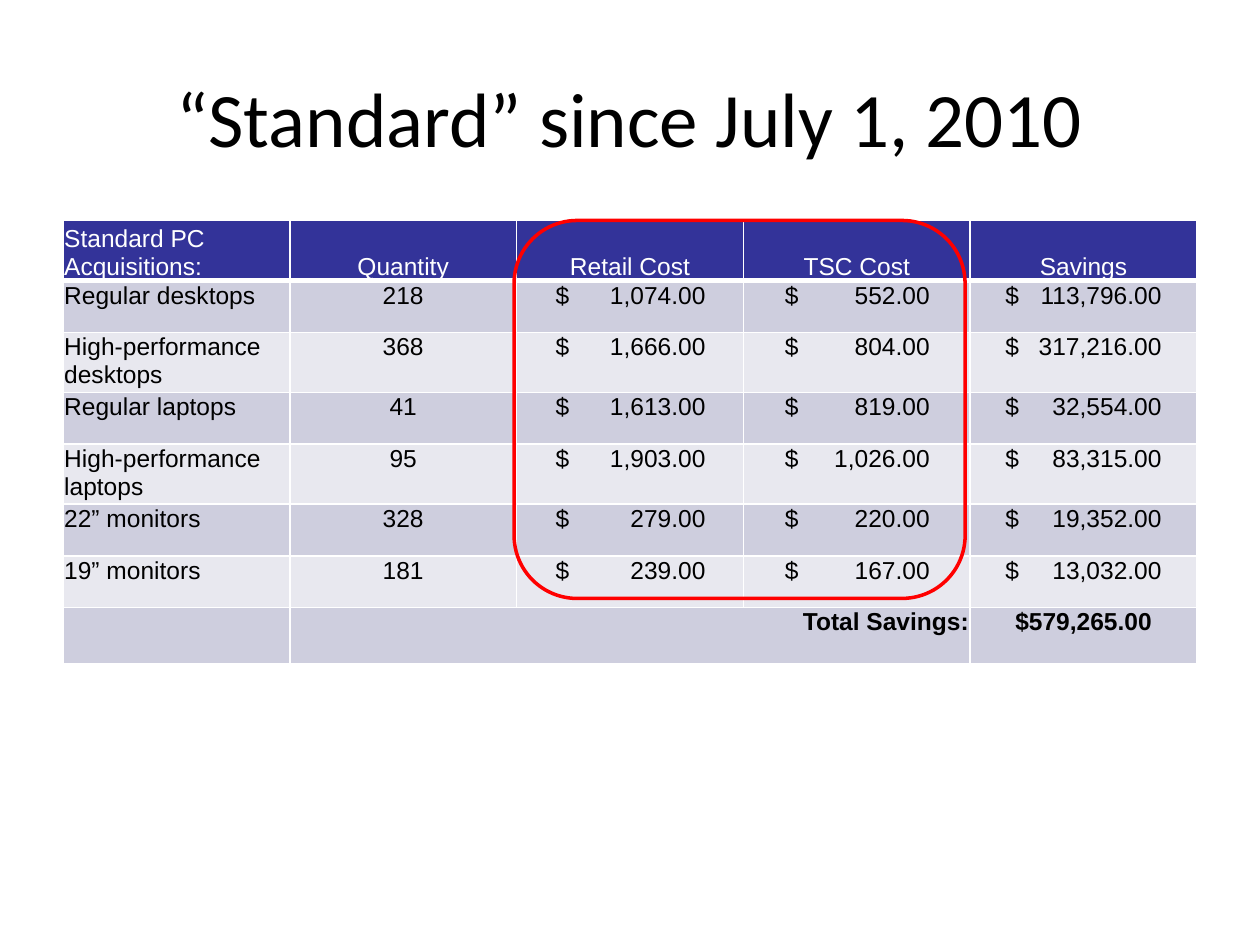
from dataclasses import dataclass

from lxml.etree import SubElement
from pptx import Presentation
from pptx.dml.color import RGBColor
from pptx.enum.shapes import MSO_SHAPE
from pptx.enum.text import MSO_ANCHOR, PP_ALIGN
from pptx.oxml import parse_xml
from pptx.oxml.ns import nsdecls, qn
from pptx.util import Inches, Pt


@dataclass(frozen=True)
class Theme:
    title_font: str = "Calibri"
    body_font: str = "Arial"
    title_size: int = 44
    body_size: int = 14
    ink: str = "000000"
    white: str = "FFFFFF"
    header: str = "333399"
    bands: tuple = ("CECEDE", "E8E8EF")
    highlight: str = "FF0000"


def write(tf, text, font, size, color, align=PP_ALIGN.LEFT, bold=False, tabs=()):
    p = tf.paragraphs[0]
    p.alignment = align
    if tabs:
        stops = SubElement(p._p.get_or_add_pPr(), qn("a:tabLst"))
        for pos, kind in tabs:
            SubElement(stops, qn("a:tab"), pos=str(Inches(pos)), algn=kind)
    r = p.add_run()
    r.text = text
    r.font.name = font
    r.font.size = Pt(size)
    r.font.bold = bold
    r.font.color.rgb = RGBColor.from_string(color)


class Deck:
    COLS, ROWS = 20, 15

    def __init__(self, theme):
        self.theme = theme
        self.prs = Presentation()
        self.prs.slide_width, self.prs.slide_height = Inches(10), Inches(7.5)
        self.s = self.prs.slides.add_slide(self.prs.slide_layouts[6])

    def box(self, col, row, cols, rows):
        dx = self.prs.slide_width / self.COLS
        dy = self.prs.slide_height / self.ROWS
        return [round(v) for v in (col * dx, row * dy, cols * dx, rows * dy)]

    def title(self, text, *at):
        t = self.theme
        tf = self.s.shapes.add_textbox(*self.box(*at)).text_frame
        tf.word_wrap = True
        tf.vertical_anchor = MSO_ANCHOR.MIDDLE
        write(tf, text, t.title_font, t.title_size, t.ink, PP_ALIGN.CENTER)

    def cell(self, cell, text, fill, color, anchor=MSO_ANCHOR.TOP, bottom=1, **fmt):
        t = self.theme
        cell.margin_left = cell.margin_right = cell.margin_top = Inches(0.01)
        cell.margin_bottom = 0
        cell.vertical_anchor = anchor
        cell.fill.solid()
        cell.fill.fore_color.rgb = RGBColor.from_string(fill)
        tc_pr = cell._tc.get_or_add_tcPr()
        for i, side in enumerate("LRTB"):
            width = Pt(bottom if side == "B" else 1)
            tc_pr.insert(i, parse_xml(
                f'<a:ln{side} {nsdecls("a")} w="{width}"><a:solidFill>'
                f'<a:srgbClr val="{t.white}"/></a:solidFill></a:ln{side}>'))
        if text:
            write(cell.text_frame, text, t.body_font, t.body_size, color, **fmt)
        else:
            cell.text_frame.paragraphs[0].font.size = Pt(t.body_size)

    def table(self, header, items, total, money_tabs, *at):
        t = self.theme
        rows = [header, *items, total]
        last = len(rows) - 1
        tbl = self.s.shapes.add_table(len(rows), len(header), *self.box(*at)).table
        tbl.horz_banding = False
        for row in tbl.rows:
            row.height = Inches(0.41)
        tbl.rows[last].height = Inches(0.45)
        for i, row in enumerate(rows):
            for j, text in enumerate(row):
                fmt = {"align": PP_ALIGN.CENTER if j else PP_ALIGN.LEFT}
                fill, color = t.bands[(i - 1) % 2], t.ink
                if i == 0:
                    fill, color = t.header, t.white
                    fmt.update(anchor=MSO_ANCHOR.BOTTOM, bottom=3)
                elif i == last:
                    fmt.update(bold=True)
                    if j == 1:
                        fmt.update(align=PP_ALIGN.RIGHT)
                elif j in money_tabs:
                    left, right = money_tabs[j]
                    text = f"\t$\t{text}"
                    fmt.update(align=PP_ALIGN.LEFT, tabs=((left, "l"), (right, "r")))
                self.cell(tbl.cell(i, j), text, fill, color, **fmt)
        tbl.cell(last, 1).merge(tbl.cell(last, 3))

    def outline(self, *at):
        sp = self.s.shapes.add_shape(MSO_SHAPE.ROUNDED_RECTANGLE, *self.box(*at))
        sp.shadow.inherit = False
        sp.fill.background()
        sp.line.color.rgb = RGBColor.from_string(self.theme.highlight)
        sp.line.width = Pt(2)


HEADER = ["Standard PC Acquisitions:", "Quantity", "Retail Cost", "TSC Cost", "Savings"]
ITEMS = [
    ["Regular desktops", "218", "1,074.00", "552.00", "113,796.00"],
    ["High-performance desktops", "368", "1,666.00", "804.00", "317,216.00"],
    ["Regular laptops", "41", "1,613.00", "819.00", "32,554.00"],
    ["High-performance laptops", "95", "1,903.00", "1,026.00", "83,315.00"],
    ["22” monitors", "328", "279.00", "220.00", "19,352.00"],
    ["19” monitors", "181", "239.00", "167.00", "13,032.00"],
]
TOTAL = ["", "Total Savings:", "", "", "$579,265.00"]
MONEY_TABS = {2: (0.3, 1.49), 3: (0.32, 1.47), 4: (0.27, 1.51)}


def main():
    deck = Deck(Theme())
    deck.title("“Standard” since July 1, 2010", 1, 0.6, 18, 2.5)
    deck.table(HEADER, ITEMS, TOTAL, MONEY_TABS, 1, 3.5, 18, 6.64)
    deck.outline(8.16, 3.5, 7.16, 6)
    deck.prs.save("out.pptx")


if __name__ == "__main__":
    main()
